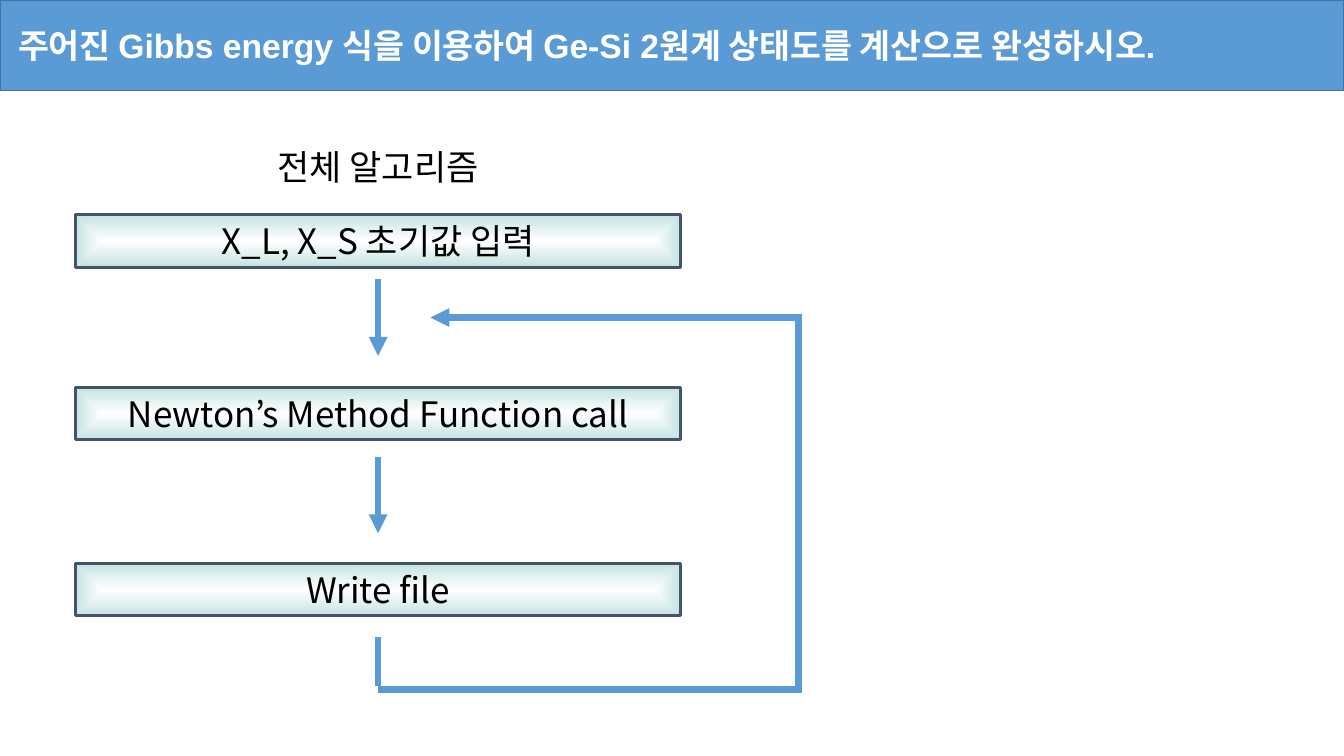
from dataclasses import dataclass

from pptx import Presentation
from pptx.dml.color import RGBColor
from pptx.enum.shapes import MSO_CONNECTOR, MSO_SHAPE
from pptx.enum.text import MSO_ANCHOR, PP_ALIGN
from pptx.oxml.ns import qn
from pptx.oxml.xmlchemy import OxmlElement
from pptx.util import Inches, Pt

RECT = MSO_SHAPE.RECTANGLE
STRAIGHT = MSO_CONNECTOR.STRAIGHT
MIDDLE = MSO_ANCHOR.MIDDLE
LEFT, CENTER = PP_ALIGN.LEFT, PP_ALIGN.CENTER


@dataclass(frozen=True)
class Theme:
    """Colours, fonts and type sizes of the slide."""
    blue: str = "5B9BD5"
    blue_edge: str = "43739E"
    slate: str = "44546A"
    mint: str = "C4E3E2"
    white: str = "FFFFFF"
    black: str = "000000"
    title_font: str = "Arial"
    body_font: str = "Noto Sans CJK KR"
    title_size: int = 24
    body_size: int = 25


class FlowSlide:
    """Draws the flow chart elements on one slide in one theme."""

    def __init__(self, slide, theme):
        self.s = slide
        self.t = theme

    def rect(self, x, y, w, h, edge, width):
        """Add an outlined rectangle without a shadow."""
        sp = self.s.shapes.add_shape(RECT, Inches(x), Inches(y), Inches(w), Inches(h))
        sp.shadow.inherit = False
        sp.line.color.rgb = RGBColor.from_string(edge)
        sp.line.width = Pt(width)
        return sp

    def set_text(self, sp, text, font, size, color, align=CENTER, bold=False, inset=0.1):
        """Set and format the text of a shape."""
        tf = sp.text_frame
        tf.word_wrap = True
        tf.vertical_anchor = MIDDLE
        tf.margin_left = Inches(inset)
        tf.margin_top = tf.margin_bottom = 0
        p = tf.paragraphs[0]
        p.text = text
        p.alignment = align
        r = p.runs[0]
        r.font.name = font
        r.font.size = Pt(size)
        r.font.bold = bold
        r.font.color.rgb = RGBColor.from_string(color)
        ea = OxmlElement("a:ea")
        ea.set("typeface", self.t.body_font)
        r.font._element.find(qn("a:latin")).addnext(ea)

    def banner(self, text, w, h):
        """Add the title band across the top."""
        t = self.t
        sp = self.rect(0, 0, w, h, t.blue_edge, 1)
        sp.fill.solid()
        sp.fill.fore_color.rgb = RGBColor.from_string(t.blue)
        self.set_text(sp, text, t.title_font, t.title_size, t.white, LEFT, True, 0.18)

    def step(self, text, x, y, w, h):
        """Add a step box with a gradient running out from its centre."""
        t = self.t
        sp = self.rect(x, y, w, h, t.slate, 2.25)
        sp.fill.gradient()
        for stop, color in zip(sp.fill.gradient_stops, (t.white, t.mint)):
            stop.color.rgb = RGBColor.from_string(color)
        shape_fill = OxmlElement("a:path")
        shape_fill.set("path", "shape")
        center = OxmlElement("a:fillToRect")
        for side in "ltrb":
            center.set(side, "50000")
        shape_fill.append(center)
        grad = sp._element.spPr.find(qn("a:gradFill"))
        grad.remove(grad.find(qn("a:lin")))
        grad.find(qn("a:gsLst")).addnext(shape_fill)
        self.set_text(sp, text, t.body_font, t.body_size, t.black)

    def label(self, text, x, y, w, h):
        """Add a plain centred heading."""
        t = self.t
        sp = self.s.shapes.add_textbox(Inches(x), Inches(y), Inches(w), Inches(h))
        self.set_text(sp, text, t.body_font, t.body_size, t.black)

    def line(self, x1, y1, x2, y2, arrow=False):
        """Add a flow line, with an arrowhead at its end if asked."""
        cn = self.s.shapes.add_connector(
            STRAIGHT, Inches(x1), Inches(y1), Inches(x2), Inches(y2))
        cn.line.color.rgb = RGBColor.from_string(self.t.blue)
        cn.line.width = Pt(4.5)
        if arrow:
            tail = OxmlElement("a:tailEnd")
            tail.set("type", "triangle")
            cn._element.spPr.find(qn("a:ln")).append(tail)
        cn._element.spPr.append(OxmlElement("a:effectLst"))


def main():
    """Build the slide and save it."""
    prs = Presentation()
    prs.slide_width, prs.slide_height = Inches(13.33), Inches(7.5)
    flow = FlowSlide(prs.slides.add_slide(prs.slide_layouts[6]), Theme())

    flow.banner("주어진 Gibbs energy 식을 이용하여 Ge-Si 2원계 상태도를 계산으로 완성하시오.",
                13.33, 0.9)

    left, width, height = 0.75, 6, 0.52
    steps = (("X_L, X_S 초기값 입력", 2.13),
             ("Newton’s Method Function call", 3.84),
             ("Write file", 5.59))
    for text, top in steps:
        flow.step(text, left, top, width, height)
    flow.label("전체 알고리즘", left, 1.39, width, height)

    middle = left + width / 2
    for top in (2.77, 4.53):
        flow.line(middle, top, middle, top + 0.76, arrow=True)

    loop_x, loop_top, loop_bottom = 7.92, 3.15, 6.84
    flow.line(loop_x + 0.03, loop_top, 4.27, loop_top, arrow=True)
    flow.line(loop_x, loop_top, loop_x, loop_bottom + 0.02)
    flow.line(middle, loop_bottom, loop_x + 0.03, loop_bottom)
    flow.line(middle, 6.32, middle, loop_bottom - 0.03)

    prs.save("out.pptx")


if __name__ == "__main__":
    main()
